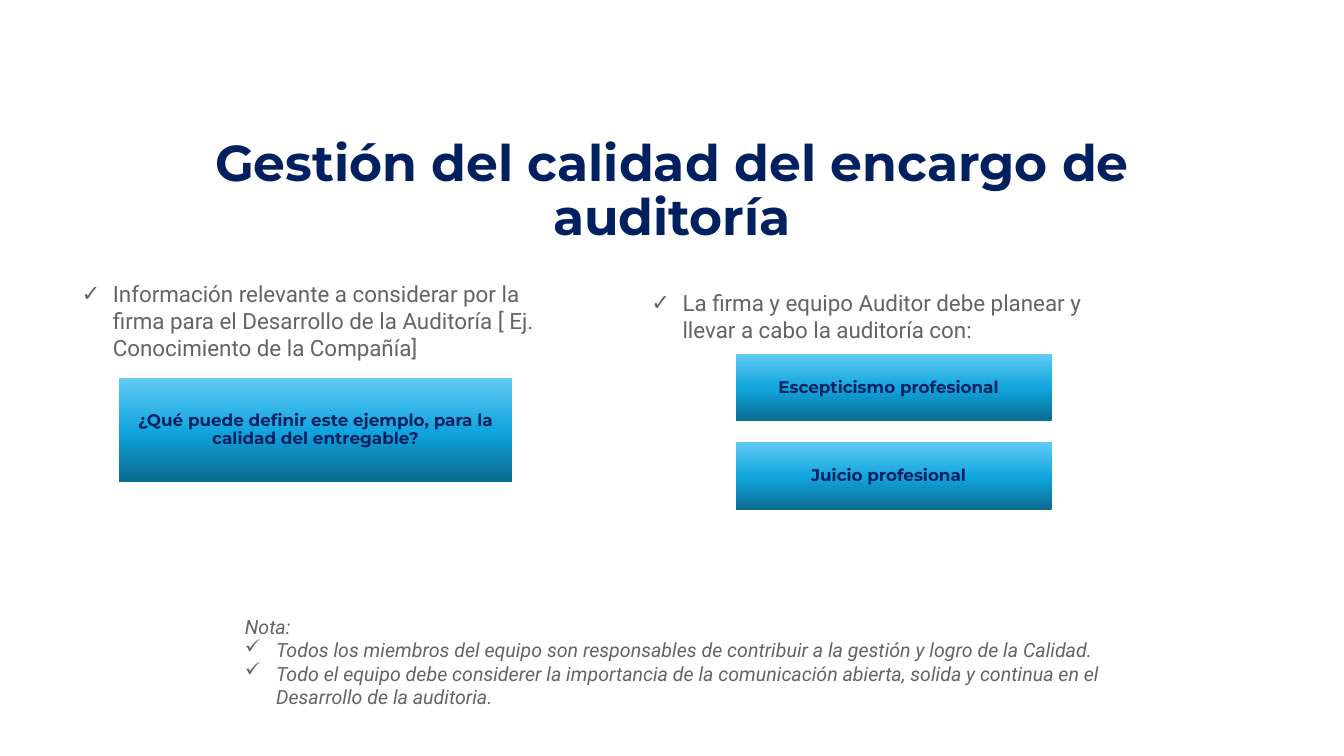
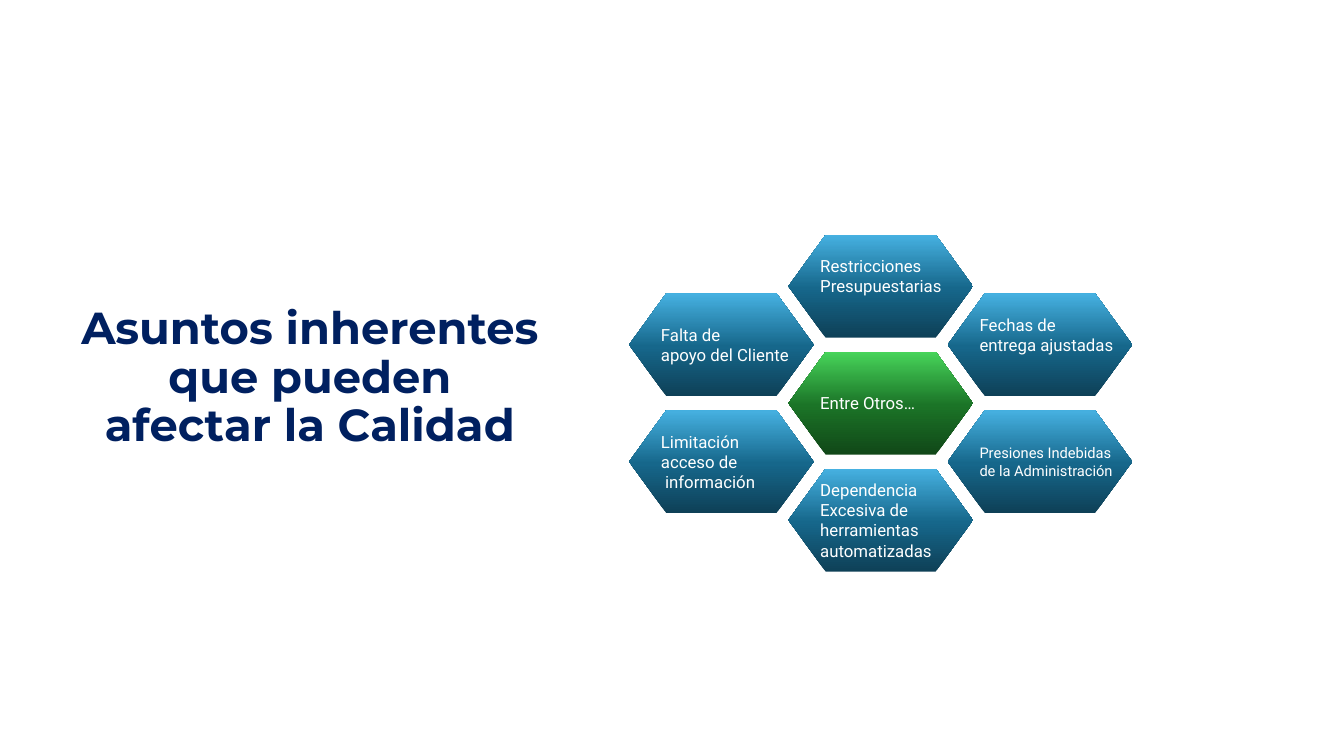
from copy import deepcopy

from pptx import Presentation
from pptx.dml.color import RGBColor
from pptx.enum.shapes import MSO_SHAPE
from pptx.enum.text import MSO_ANCHOR, MSO_AUTO_SIZE, PP_ALIGN
from pptx.oxml.ns import qn
from pptx.oxml import parse_xml
from pptx.util import Emu, Pt

EMU_PER_PX = 9144
NAVY = RGBColor(0x00, 0x20, 0x60)
GRAY = RGBColor(0x64, 0x64, 0x64)
WHITE = RGBColor(0xFF, 0xFF, 0xFF)
SKY = (RGBColor(0x0A, 0x6A, 0x8F), RGBColor(0x10, 0xA4, 0xDD), RGBColor(0x61, 0xCB, 0xF4))
BLUE = (RGBColor(0x0E, 0x40, 0x57), RGBColor(0x16, 0x67, 0x8B), RGBColor(0x46, 0xB1, 0xE1))
GREEN = (RGBColor(0x11, 0x48, 0x18), RGBColor(0x1B, 0x74, 0x27), RGBColor(0x47, 0xD4, 0x5A))
STOP_POSITIONS = (0, 0.48, 1)

RECTANGLE = MSO_SHAPE.RECTANGLE
HEXAGON = MSO_SHAPE.HEXAGON
MIDDLE = MSO_ANCHOR.MIDDLE
BOTTOM = MSO_ANCHOR.BOTTOM
NO_AUTOSIZE = MSO_AUTO_SIZE.NONE
CENTER = PP_ALIGN.CENTER
LEFT = PP_ALIGN.LEFT

TITLE_ONLY, TWO_CONTENT = 5, 3
HEADING = {"name": "Montserrat", "bold": True}
LIST_INSETS = (10, 5, 0, 8)
BOX_INSETS = (10, 5, 10, 5)
CHECK = "✓"
CHECK_INDENT = 31


def px(length):
    """Turn px into EMU."""
    return Emu(length * EMU_PER_PX)


def place(shape, box):
    """Move a shape to a box of left, top, width and height."""
    for name, length in zip(("left", "top", "width", "height"), box):
        setattr(shape, name, px(length))


def set_frame(frame, insets, anchor, wrap=True):
    """Set the insets, anchor and wrapping of a text frame."""
    for side, length in zip(("left", "top", "right", "bottom"), insets):
        setattr(frame, f"margin_{side}", px(length))
    frame.auto_size = NO_AUTOSIZE
    frame.word_wrap = wrap
    frame.vertical_anchor = anchor


def add_check(para):
    """Give a paragraph a check mark and a hanging indent."""
    properties = para._p.get_or_add_pPr()
    properties.set("marL", str(px(CHECK_INDENT)))
    properties.set("indent", str(-px(CHECK_INDENT)))
    bullet = parse_xml(
        '<a:buChar xmlns:a="http://schemas.openxmlformats.org/drawingml/2006/main"/>'
    )
    bullet.set("char", CHECK)
    properties.append(bullet)


def write(frame, lines, size, color, font, align=LEFT, spacing=1.0, checked_from=None):
    """Fill a frame with lines, check-marked from a given line on."""
    formats = {"size": Pt(size), **font}
    for index, line in enumerate(lines):
        para = frame.add_paragraph() if index else frame.paragraphs[0]
        if checked_from is not None and index >= checked_from:
            add_check(para)
        para.alignment = align
        para.line_spacing = spacing
        para.space_before = Pt(0)
        span = para.add_run()
        span.text = line
        for name, value in formats.items():
            setattr(span.font, name, value)
        span.font.color.rgb = color


def add_page(deck, layout, title, box, size):
    """Add a page with its centred title."""
    page = deck.slides.add_slide(deck.slide_layouts[layout])
    place(page.shapes.title, box)
    frame = page.shapes.title.text_frame
    set_frame(frame, BOX_INSETS, MIDDLE)
    write(frame, [title], size, NAVY, HEADING, CENTER, 0.9)
    return page


def add_gradient_shape(page, kind, box, colors):
    """Add an unlined shape that brightens from bottom to top."""
    shape = page.shapes.add_shape(kind, *map(px, box))
    shape.shadow.inherit = False
    shape.line.fill.background()
    shape.fill.gradient()
    shape.fill.gradient_angle = 90
    stops = shape._element.spPr.find(qn("a:gradFill")).find(qn("a:gsLst"))
    stops.insert(1, deepcopy(stops[0]))
    for stop, position, color in zip(shape.fill.gradient_stops, STOP_POSITIONS, colors):
        stop.position = position
        stop.color.rgb = color
    return shape


def add_button(page, box, text, insets):
    """Add a rectangle with a bold centred label."""
    frame = add_gradient_shape(page, RECTANGLE, box, SKY).text_frame
    set_frame(frame, insets, MIDDLE)
    write(frame, [text], 12, NAVY, HEADING, CENTER, 0.9)


def add_checklist(holder, box, text):
    """Fill a body placeholder with one check-marked statement."""
    place(holder, box)
    set_frame(holder.text_frame, LIST_INSETS, BOTTOM)
    write(holder.text_frame, [text], 16, GRAY, {"name": "Roboto"}, checked_from=0)


def add_note(page, box, lines):
    """Add the italic note with its check-marked points."""
    frame = page.shapes.add_textbox(*map(px, box)).text_frame
    set_frame(frame, LIST_INSETS, BOTTOM)
    write(frame, lines, 14, GRAY, {"name": "Roboto", "italic": True}, checked_from=1)


def add_hexagon(page, box, lines, colors, size, lift):
    """Add a hexagon whose text is raised by a larger bottom inset."""
    shape = add_gradient_shape(page, HEXAGON, box, colors)
    shape.adjustments[0] = 0.362
    set_frame(shape.text_frame, (4, 4, 4, 4 + lift), MIDDLE, wrap=False)
    write(shape.text_frame, lines, size, WHITE, {"name": "Roboto"})


def add_honeycomb(page, left, middle):
    """Add hexagons by column and half-row around the middle one."""
    cells = (
        (0, -1, ["Falta de", "apoyo del Cliente"], BLUE, 12, 0),
        (1, 0, ["Entre Otros…"], GREEN, 12, 0),
        (2, -1, ["Fechas de", "entrega ajustadas"], BLUE, 12, 20),
        (1, -2, ["Restricciones", "Presupuestarias"], BLUE, 12, 20),
        (0, 1, ["Limitación", "acceso de", " información"], BLUE, 12, 0),
        (2, 1, ["Presiones Indebidas", "de la Administración"], BLUE, 10.5, 0),
        (1, 2, ["Dependencia", "Excesiva de", "herramientas", "automatizadas"], BLUE, 12, 0),
    )
    for column, row, lines, colors, size, lift in cells:
        box = (left + column * 158, middle + row * 58, 183, 102)
        add_hexagon(page, box, lines, colors, size, lift)


def build_engagement_page(deck):
    """Build the page on quality in the audit engagement."""
    page = add_page(deck, TWO_CONTENT, "Gestión del calidad del encargo de auditoría",
                    (161, 146, 1011, 89), 36)
    add_checklist(page.placeholders[1], (71, 272, 485, 94),
                  "Información relevante a considerar por la firma para el Desarrollo "
                  "de la Auditoría [ Ej. Conocimiento de la Compañía]")
    add_checklist(page.placeholders[2], (636, 281, 485, 67),
                  "La firma y equipo Auditor debe planear y llevar a cabo la auditoría con:")
    add_button(page, (118, 375, 390, 103),
               "¿Qué puede definir este ejemplo, para la calidad del entregable?", BOX_INSETS)
    for index, text in enumerate(("Escepticismo profesional", "Juicio profesional")):
        add_button(page, (730, 351 + index * 88, 313, 67), text, (10, 5, 20, 5))
    add_note(page, (233, 604, 868, 107), [
        "Nota:",
        "Todos los miembros del equipo son responsables de contribuir a la gestión "
        "y logro de la Calidad.",
        "Todo el equipo debe considerer la importancia de la comunicación abierta, "
        "solida y continua en el Desarrollo de la auditoria.",
    ])


def build_issues_page(deck):
    """Build the page on issues that may affect quality."""
    page = add_page(deck, TITLE_ONLY, "Asuntos inherentes que pueden afectar la Calidad",
                    (69, 255, 477, 241), 32)
    add_honeycomb(page, 624, 349)


def main():
    """Build and save the deck."""
    deck = Presentation()
    deck.slide_width = px(1333)
    deck.slide_height = px(750)
    build_engagement_page(deck)
    build_issues_page(deck)
    deck.save("out.pptx")


if __name__ == "__main__":
    main()
